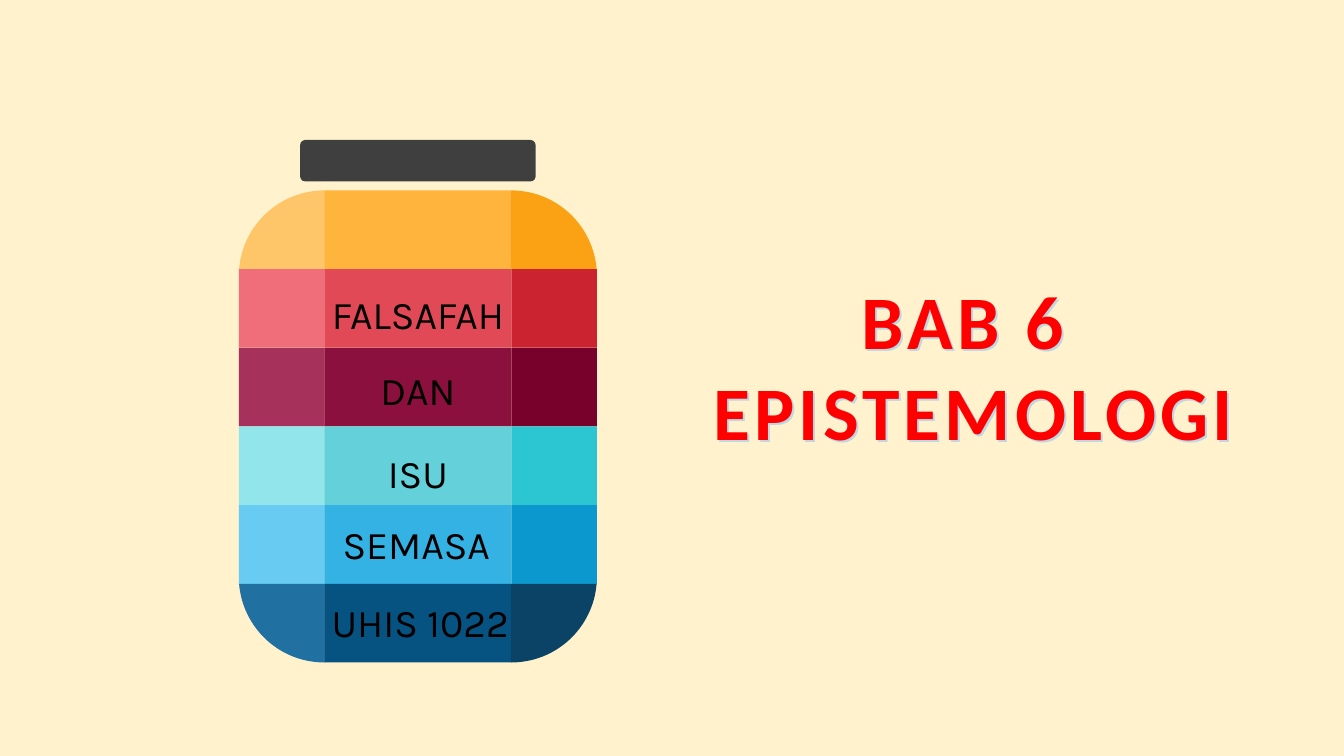
from math import asin, cos, pi, sin

from lxml.etree import SubElement
from pptx import Presentation
from pptx.dml.color import RGBColor
from pptx.enum.shapes import MSO_SHAPE
from pptx.enum.text import MSO_ANCHOR, MSO_AUTO_SIZE, PP_ALIGN
from pptx.oxml.ns import qn
from pptx.util import Pt


def paint(shape, color):
    shape.shadow.inherit = False
    shape.fill.solid()
    shape.fill.fore_color.rgb = RGBColor.from_string(color)
    shape.line.fill.background()


def add_label(left, top, width, height, lines, font_name, size, color):
    box = slide.shapes.add_textbox(Pt(left), Pt(top), Pt(width), Pt(height))
    frame = box.text_frame
    frame.word_wrap = True
    frame.auto_size = MSO_AUTO_SIZE.SHAPE_TO_FIT_TEXT
    frame.text = "\n".join(lines)
    for paragraph in frame.paragraphs:
        paragraph.alignment = PP_ALIGN.CENTER
        paragraph.font.name = font_name
        paragraph.font.size = Pt(size)
        paragraph.font.color.rgb = RGBColor.from_string(color)
    return box


presentation = Presentation()
presentation.slide_width = Pt(960)
presentation.slide_height = Pt(540)
slide = presentation.slides.add_slide(presentation.slide_layouts[6])
slide.background.fill.solid()
slide.background.fill.fore_color.rgb = RGBColor.from_string("FFF2CC")

lid = slide.shapes.add_shape(
    MSO_SHAPE.ROUNDED_RECTANGLE, Pt(214.4), Pt(100), Pt(168.2), Pt(29.6)
)
lid.adjustments[0] = 0.12
paint(lid, "3F3F3F")

jar_top = 136
band_height = 56.2
radius = 61.2
column_edges = [170.6, 231.8, 365.2, 426.4]
band_colors = [
    ("FFC569", "FFB53D", "FAA213"),
    ("F06E7A", "E24956", "CC2331"),
    ("A6325C", "8C103D", "78012C"),
    ("91E5EB", "64D1DA", "2CC6D2"),
    ("68CBF2", "34B2E3", "0A98CF"),
    ("2070A1", "065280", "0A4366"),
]
last_band = len(band_colors) - 1
jar_bottom = jar_top + len(band_colors) * band_height
start_angle = asin((radius - band_height) / radius)
arc_steps = 32

for band, colors in enumerate(band_colors):
    top = jar_top + band * band_height
    for column, color in enumerate(colors):
        left, right = column_edges[column:column + 2]
        if band in (0, last_band) and column != 1:
            inner_x, side = (right, -1) if column == 0 else (left, 1)
            if band == 0:
                inner_y, center_y, direction = top + band_height, jar_top + radius, -1
            else:
                inner_y, center_y, direction = top, jar_bottom - radius, 1
            arc = []
            for step in range(arc_steps + 1):
                angle = start_angle + (pi / 2 - start_angle) * step / arc_steps
                x = inner_x + side * radius * cos(angle)
                y = center_y + direction * radius * sin(angle)
                arc.append((Pt(x), Pt(y)))
            builder = slide.shapes.build_freeform(Pt(inner_x), Pt(inner_y))
            builder.add_line_segments(arc, close=True)
            piece = builder.convert_to_shape()
        else:
            piece = slide.shapes.add_shape(
                MSO_SHAPE.RECTANGLE, Pt(left), Pt(top), Pt(right - left), Pt(band_height)
            )
        paint(piece, color)

band_labels = [
    ("FALSAFAH", 221.8, 203.8, 153.4),
    ("DAN", 221.8, 257.8, 153.4),
    ("ISU", 221.8, 317.5, 153.4),
    ("SEMASA", 234, 368, 126.7),
    ("UHIS 1022", 228.2, 424, 144),
]
for text, left, top, width in band_labels:
    label = add_label(left, top, width, 41, [text], "Karla", 28, "000000")
    label.text_frame.vertical_anchor = MSO_ANCHOR.MIDDLE

title = add_label(
    496, 192.2, 399, 138.2, ["BAB 6 ", "EPISTEMOLOGI"], "Calibri", 54, "FF0000"
)
for paragraph in title.text_frame.paragraphs:
    paragraph.font.bold = True
    for run in paragraph.runs:
        properties = run.font._element
        properties.set("spc", "300")
        outline = SubElement(properties, qn("a:ln"), w="11430")
        outline_fill = SubElement(outline, qn("a:solidFill"))
        SubElement(outline_fill, qn("a:srgbClr"), val="7030A0")

effects = SubElement(title._element.spPr, qn("a:effectLst"))
shadow = SubElement(effects, qn("a:outerShdw"), dist="25400", dir="2700000")
SubElement(shadow, qn("a:srgbClr"), val="BDD7E3")

presentation.save("out.pptx")
